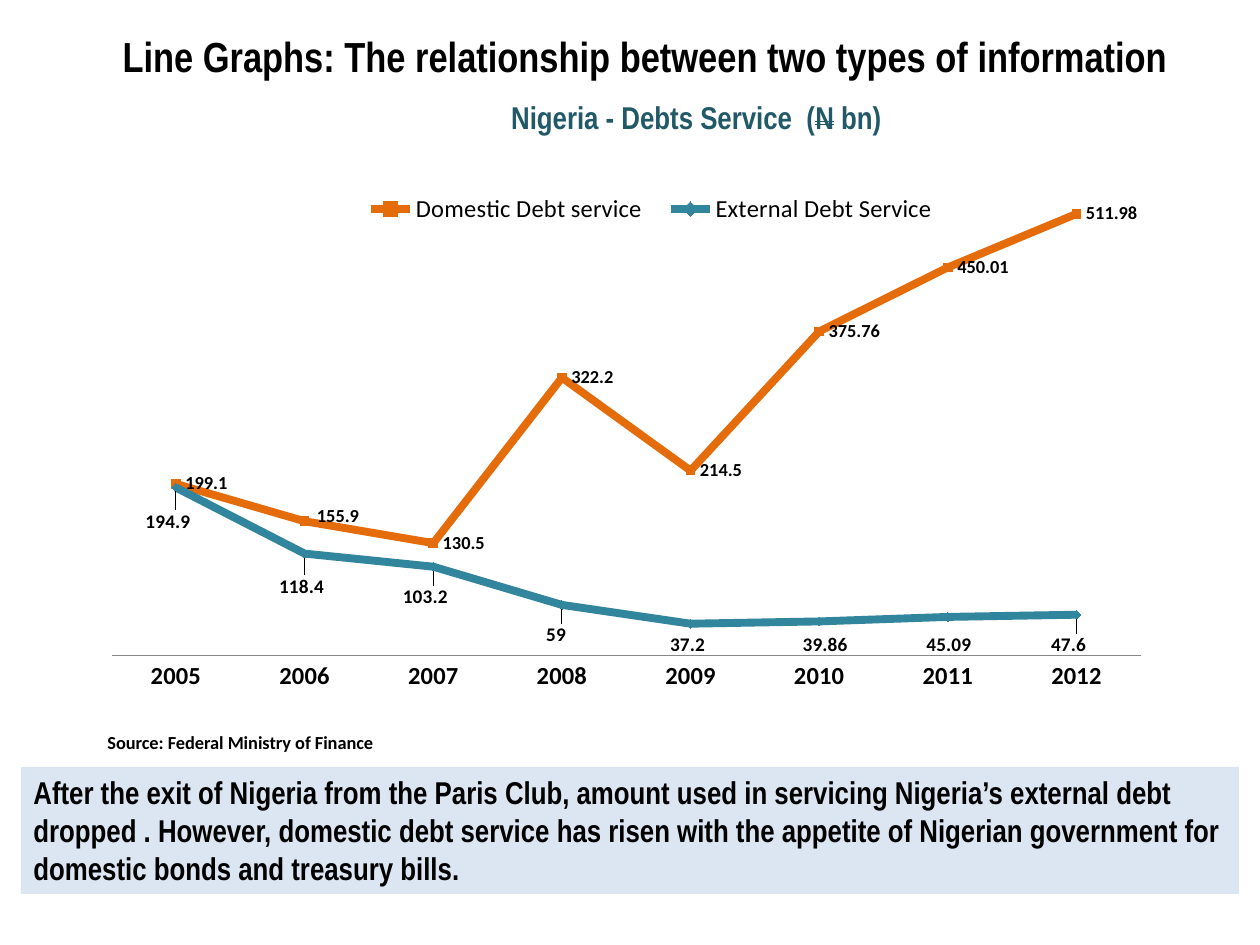
import lxml.etree
import pptx
import pptx.chart.data
import pptx.dml.color
import pptx.enum.chart
import pptx.enum.shapes
import pptx.enum.text
import pptx.oxml
import pptx.oxml.ns
import pptx.util

EMU_PER_PX = 914400 / 126
THEME = {
    "ink": "000000", "heading": "215968", "axis": "878787", "panel": "DCE6F2",
    "domestic": "E46C0A", "external": "31859C",
    "narrow": "Arial Narrow", "body": "Calibri",
    "title": 24, "subtitle": 18, "tick": 14, "small": 10.5, "label": 11, "line": 4.5,
}
CHART_BOX = (111, 21, 1040, 703)


def px(*lengths):
    return [pptx.util.Emu(round(length * EMU_PER_PX)) for length in lengths]


def style(font, size, color="ink", face="body", bold=True):
    font.size = pptx.util.Pt(THEME[size])
    font.bold = bold
    font.name = THEME[face]
    font.color.rgb = pptx.dml.color.RGBColor.from_string(THEME[color])


deck = pptx.Presentation()
deck.slide_width, deck.slide_height = px(1260, 945)
slide = deck.slides.add_slide(deck.slide_layouts[6])

debts = pptx.chart.data.CategoryChartData()
debts.categories = [str(year) for year in range(2005, 2013)]
debts.add_series("Domestic Debt service", [199.1, 155.9, 130.5, 322.2, 214.5, 375.76, 450.01, 511.98])
debts.add_series("External Debt Service", [194.9, 118.4, 103.2, 59, 37.2, 39.86, 45.09, 47.6])
chart = slide.shapes.add_chart(
    pptx.enum.chart.XL_CHART_TYPE.LINE_MARKERS, *px(*CHART_BOX), debts).chart
style(chart.font, "subtitle", bold=False)

heading = chart.chart_title.text_frame.paragraphs[0]
for text, strike in (("Nigeria - Debts Service  (", "noStrike"), ("N", "dblStrike"), (" bn)", "noStrike")):
    run = heading.add_run()
    run.text = text
    style(run.font, "subtitle", "heading", "narrow")
    run.font._element.set("strike", strike)
chart.chart_title.include_in_layout = False

chart.has_legend = True
chart.legend.position = pptx.enum.chart.XL_LEGEND_POSITION.TOP
chart.legend.include_in_layout = False
style(chart.legend.font, "tick", bold=False)

years = chart.category_axis
years.major_tick_mark = pptx.enum.chart.XL_TICK_MARK.NONE
years.format.line.color.rgb = pptx.dml.color.RGBColor.from_string(THEME["axis"])
style(years.tick_labels.font, "tick")
amounts = chart.value_axis
amounts.minimum_scale, amounts.maximum_scale = 0, 600
amounts.has_major_gridlines = False
amounts.visible = False

POSITION = pptx.enum.chart.XL_LABEL_POSITION
MARKER = pptx.enum.chart.XL_MARKER_STYLE
label_shifts = []
series_looks = (
    ("domestic", "small", POSITION.RIGHT, MARKER.SQUARE, {1: (3, -5)}),
    ("external", "label", POSITION.BELOW, MARKER.DIAMOND,
     dict(enumerate([(-8, 13), (-3, 12), (-8, 9), (-6, 9), (-3, 0), (6, 2), (1, 7), (-8, 9)]))),
)
for series, (color, size, position, marker, shifts) in zip(chart.plots[0].series, series_looks):
    rgb = pptx.dml.color.RGBColor.from_string(THEME[color])
    series.smooth = False
    series.format.line.color.rgb = rgb
    series.format.line.width = pptx.util.Pt(THEME["line"])
    series.marker.style = marker
    series.marker.size = 5
    series.marker.format.fill.solid()
    series.marker.format.fill.fore_color.rgb = rgb
    series.marker.format.line.color.rgb = rgb
    series.data_labels.show_value = True
    series.data_labels.position = position
    style(series.data_labels.font, size)
    for index, shift in shifts.items():
        label = series.points[index].data_label
        style(label.font, size)
        label.position = position
        label_shifts.append((series.data_labels._element.xpath(f'c:dLbl[c:idx/@val="{index}"]')[0], shift))

left, top, width, height = CHART_BOX
layouts = [
    (chart.chart_title._element, {"xMode": "edge", "yMode": "edge",
                                  "x": (507 - left) / width, "y": (101 - top) / height}),
    (chart.legend._element, {"xMode": "edge", "yMode": "edge", "x": (350 - left) / width,
                             "y": (191 - top) / height, "w": 602 / width, "h": 36 / height}),
    (chart._chartSpace.chart.plotArea, {"layoutTarget": "inner", "xMode": "edge", "yMode": "edge",
                                        "x": 0, "y": 117 / height, "w": 1030 / width, "h": 518 / height}),
] + [(label, {"x": dx / width, "y": dy / height}) for label, (dx, dy) in label_shifts]
qn = pptx.oxml.ns.qn
for owner, settings in layouts:
    for old in owner.findall(qn("c:layout")):
        owner.remove(old)
    layout = lxml.etree.Element(qn("c:layout"))
    manual = lxml.etree.SubElement(layout, qn("c:manualLayout"))
    for key, value in settings.items():
        lxml.etree.SubElement(manual, qn(f"c:{key}")).set("val", str(value))
    leading = [child for child in owner if child.tag in (qn("c:idx"), qn("c:tx"), qn("c:legendPos"))]
    owner.insert(len(leading), layout)

panel = slide.shapes.add_shape(pptx.enum.shapes.MSO_SHAPE.RECTANGLE, *px(21, 767, 1218, 127))
panel.shadow.inherit = False
panel.fill.solid()
panel.fill.fore_color.rgb = pptx.dml.color.RGBColor.from_string(THEME["panel"])
panel.line.fill.background()
source = slide.shapes.add_textbox(*px(95, 725, 336, 35))
title = slide.shapes.add_textbox(*px(-32, -10, 1354, 131))

ALIGN = pptx.enum.text.PP_ALIGN
ANCHOR = pptx.enum.text.MSO_ANCHOR
for box, text, size, face, align, anchor in (
    (panel, "After the exit of Nigeria from the Paris Club, amount used in servicing Nigeria’s external debt "
            "dropped . However, domestic debt service has risen with the appetite of Nigerian government for "
            "domestic bonds and treasury bills.", "subtitle", "narrow", ALIGN.LEFT, ANCHOR.TOP),
    (source, "Source: Federal Ministry of Finance", "small", "body", ALIGN.LEFT, ANCHOR.TOP),
    (title, "Line Graphs: The relationship between two types of information",
     "title", "narrow", ALIGN.CENTER, ANCHOR.MIDDLE),
):
    box.text_frame.word_wrap = True
    box.text_frame.vertical_anchor = anchor
    paragraph = box.text_frame.paragraphs[0]
    paragraph.alignment = align
    run = paragraph.add_run()
    run.text = text
    style(run.font, size, face=face)

deck.save("out.pptx")
